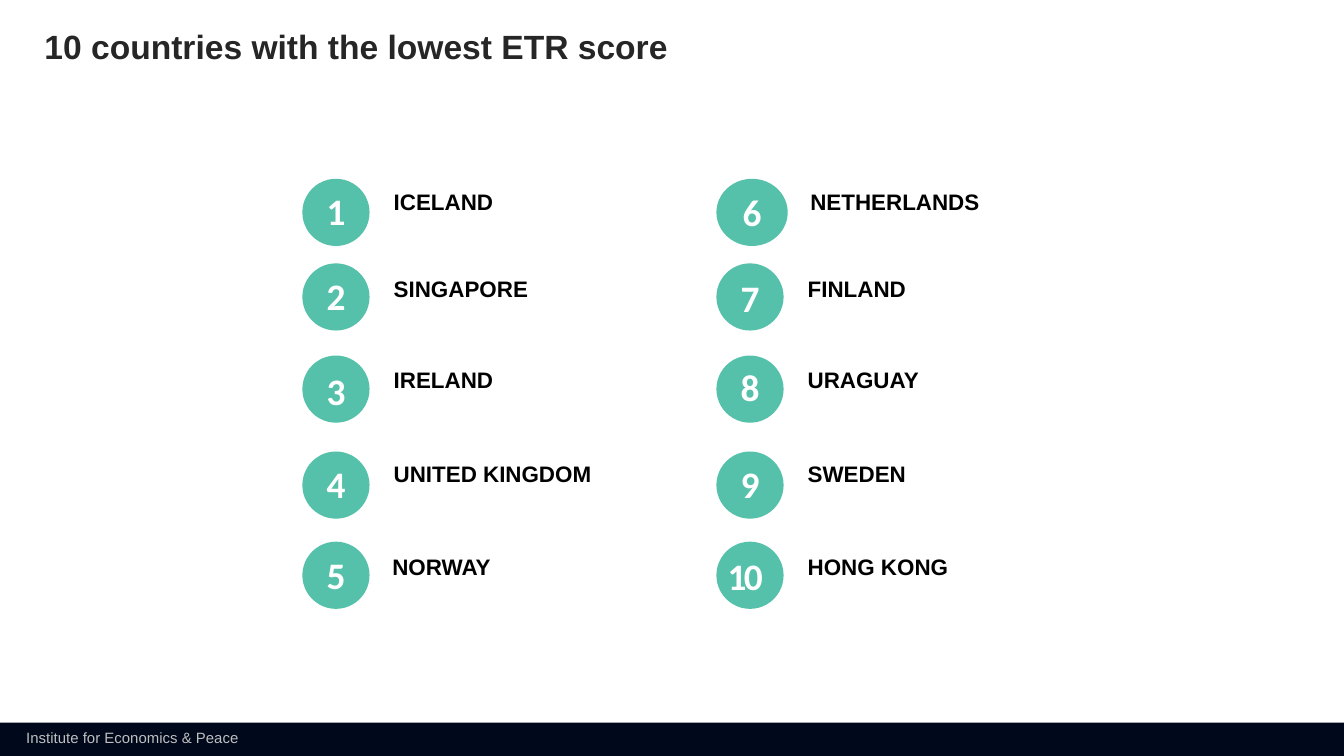
from pptx import Presentation
from pptx.dml.color import RGBColor
from pptx.enum.shapes import MSO_SHAPE
from pptx.enum.text import MSO_ANCHOR, MSO_AUTO_SIZE, PP_ALIGN
from pptx.util import Pt

TITLE = "10 countries with the lowest ETR score"
FOOTER = "Institute for Economics & Peace"
# One list per column: country, top of its number, width of its label
COLUMNS = [
    [("ICELAND", 97.2, 87), ("SINGAPORE", 142.6, 101), ("IRELAND", 193.7, 101),
     ("UNITED KINGDOM", 243.4, 125), ("NORWAY", 292.3, 94)],
    [("NETHERLANDS", 97.9, 112), ("FINLAND", 144, 99), ("URAGUAY", 191.5, 150),
     ("SWEDEN", 243.4, 117), ("HONG KONG", 293, 150)],
]
COLUMN_LEFTS = [162, 383.8]
CIRCLE_TOPS = [95.8, 141.1, 190.5, 241.9, 290.2]
LABEL_TOPS = [97.9, 144.7, 193.7, 244.1, 293.8]
LABEL_OFFSET = 43.5
LABEL_NUDGES = {5: -0.7, 6: 1.4}
CIRCLE_SIZE = 36
CIRCLE_WIDTHS = {6: 38.2}
NUMBER_HEIGHT = 31.7

WHITE = RGBColor(0xFF, 0xFF, 0xFF)
BLACK = RGBColor(0, 0, 0)
TEAL = RGBColor(0x55, 0xC1, 0xAA)
NAVY = RGBColor(0x00, 0x08, 0x1C)
GRAY = RGBColor(0xBF, 0xBF, 0xBF)
CHARCOAL = RGBColor(0x26, 0x26, 0x26)


def style_text(frame, text, size, color, bold=True, name="Arial"):
    frame.text = text
    font = frame.paragraphs[0].runs[0].font
    font.size, font.bold, font.name = Pt(size), bold, name
    font.color.rgb = color


def set_margins(frame, horizontal, vertical):
    frame.margin_left = frame.margin_right = Pt(horizontal)
    frame.margin_top = frame.margin_bottom = Pt(vertical)


def add_filled(shapes, kind, left, top, width, height, color):
    shape = shapes.add_shape(kind, Pt(left), Pt(top), Pt(width), Pt(height))
    shape.shadow.inherit = False
    shape.fill.solid()
    shape.fill.fore_color.rgb = color
    shape.line.fill.background()


def add_text(shapes, left, top, width, height, wrap=True):
    box = shapes.add_textbox(Pt(left), Pt(top), Pt(width), Pt(height))
    box.text_frame.word_wrap = wrap
    return box.text_frame


def add_country(slide, rank, country, column_left, row, number_top, label_width):
    shapes = slide.shapes.add_group_shape().shapes
    label_left = column_left + LABEL_OFFSET + LABEL_NUDGES.get(rank, 0)
    label = add_text(shapes, label_left, LABEL_TOPS[row], label_width, 20)
    set_margins(label, 5.4, 2.7)
    style_text(label, country, 12, BLACK)

    circle_width = CIRCLE_WIDTHS.get(rank, CIRCLE_SIZE)
    add_filled(shapes, MSO_SHAPE.OVAL, column_left, CIRCLE_TOPS[row],
               circle_width, CIRCLE_SIZE, TEAL)

    two_digits = rank > 9
    number_left = column_left + (-5 if two_digits else 2.9)
    number_width = 41 if two_digits else circle_width - 5.8
    number = add_text(shapes, number_left, number_top, number_width, NUMBER_HEIGHT)
    style_text(number, str(rank), 20, WHITE, name="Calibri")
    paragraph = number.paragraphs[0]
    paragraph.alignment = PP_ALIGN.CENTER
    if two_digits:
        paragraph.runs[0].font._element.set("spc", "-150")


def main():
    presentation = Presentation()
    presentation.slide_width, presentation.slide_height = Pt(720), Pt(405)
    slide = presentation.slides.add_slide(presentation.slide_layouts[5])

    add_filled(slide.shapes, MSO_SHAPE.RECTANGLE, 0, 387.2, 720, 17.8, NAVY)
    footer = add_text(slide.shapes, 7, 386.7, 130, 17, wrap=False)
    style_text(footer, FOOTER, 8, GRAY, bold=False)

    title = slide.shapes.title
    title.left, title.top, title.width, title.height = Pt(23.8), Pt(16.5), Pt(415.5), Pt(21.6)
    frame = title.text_frame
    set_margins(frame, 0, 0)
    frame.auto_size = MSO_AUTO_SIZE.NONE
    frame.vertical_anchor = MSO_ANCHOR.TOP
    style_text(frame, TITLE, 18, CHARCOAL)
    frame.paragraphs[0].alignment = PP_ALIGN.LEFT
    frame.paragraphs[0].line_spacing = 0.9

    rank = 0
    for column_left, countries in zip(COLUMN_LEFTS, COLUMNS):
        for row, (country, number_top, label_width) in enumerate(countries):
            rank += 1
            add_country(slide, rank, country, column_left, row, number_top, label_width)

    presentation.save("out.pptx")


if __name__ == "__main__":
    main()
